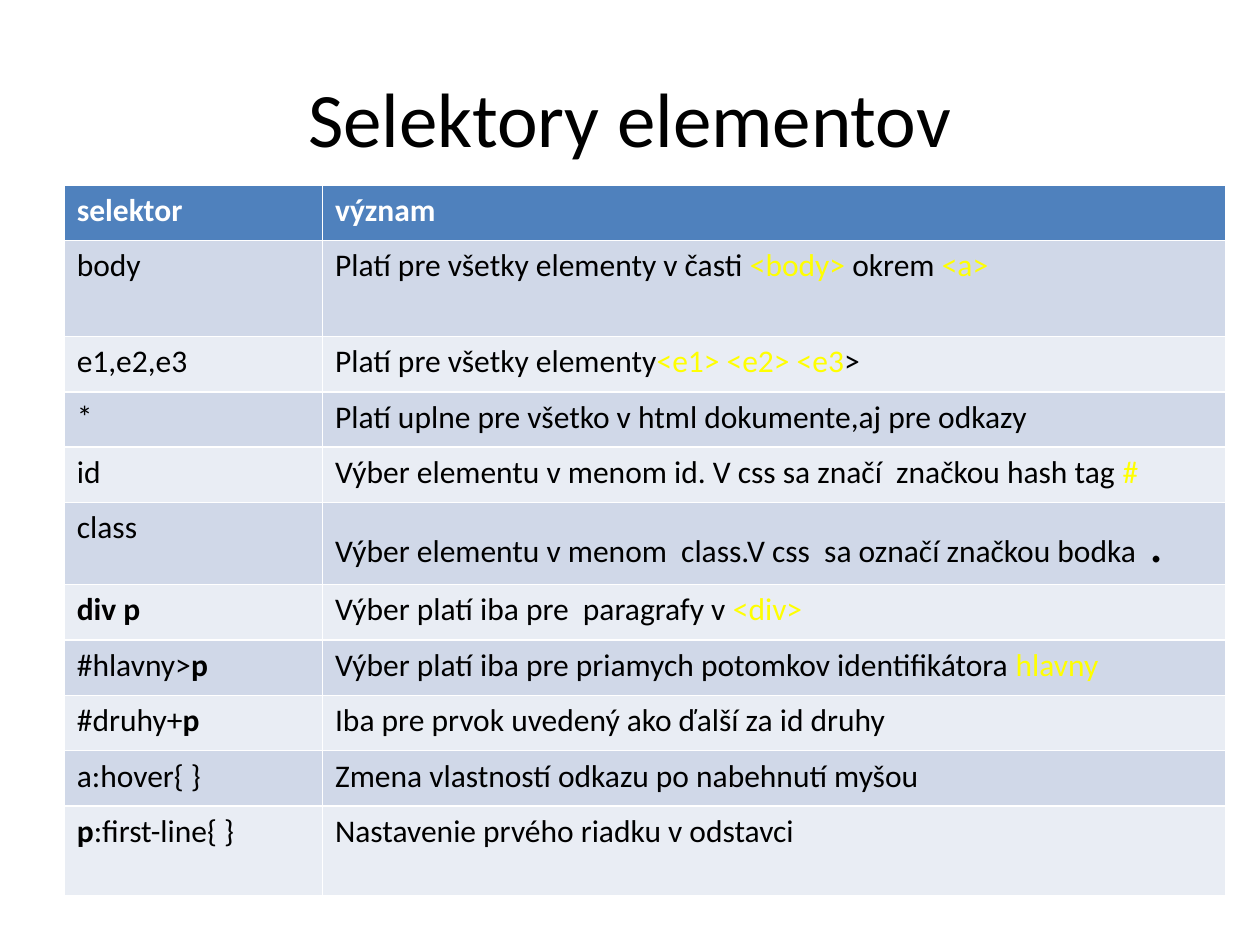
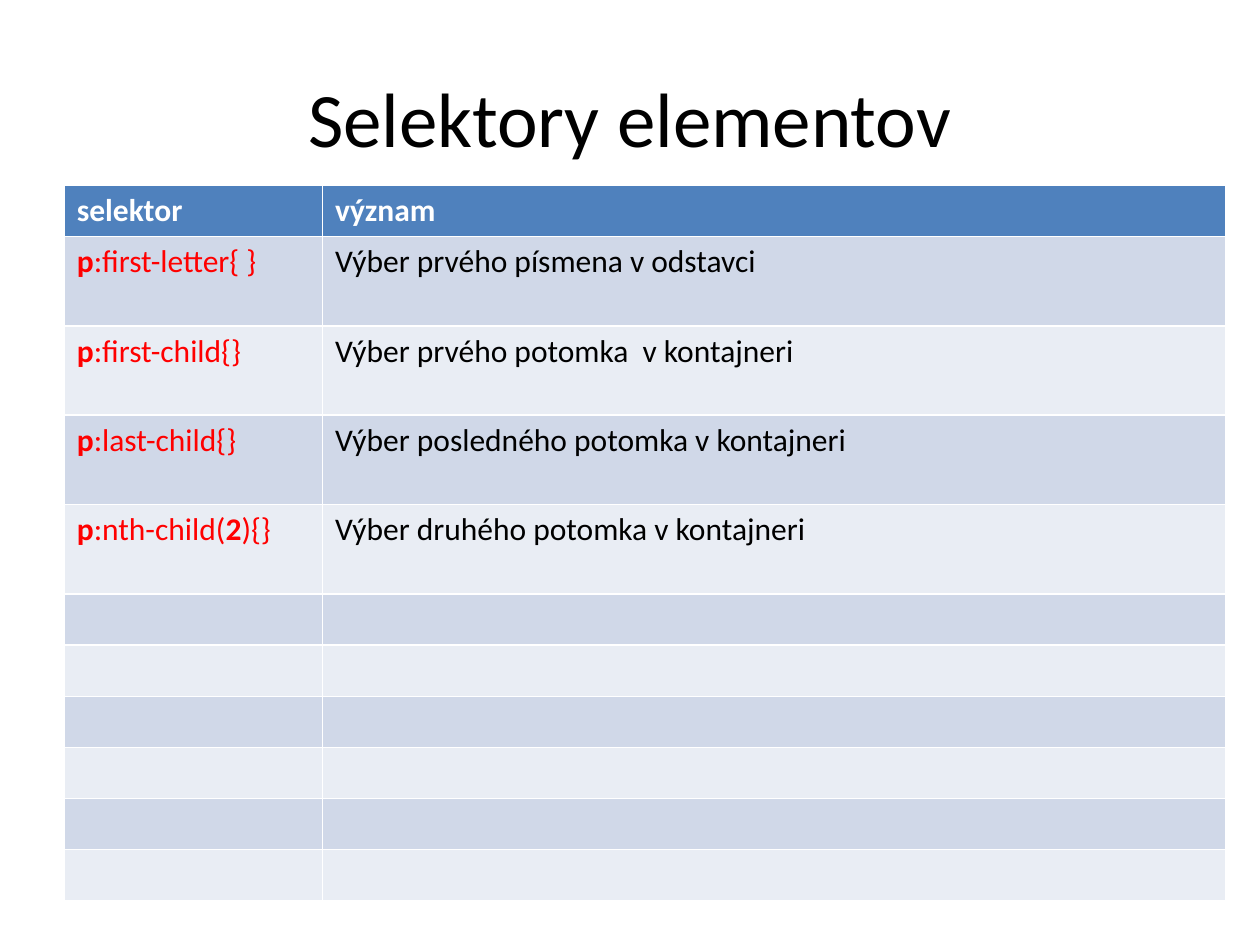
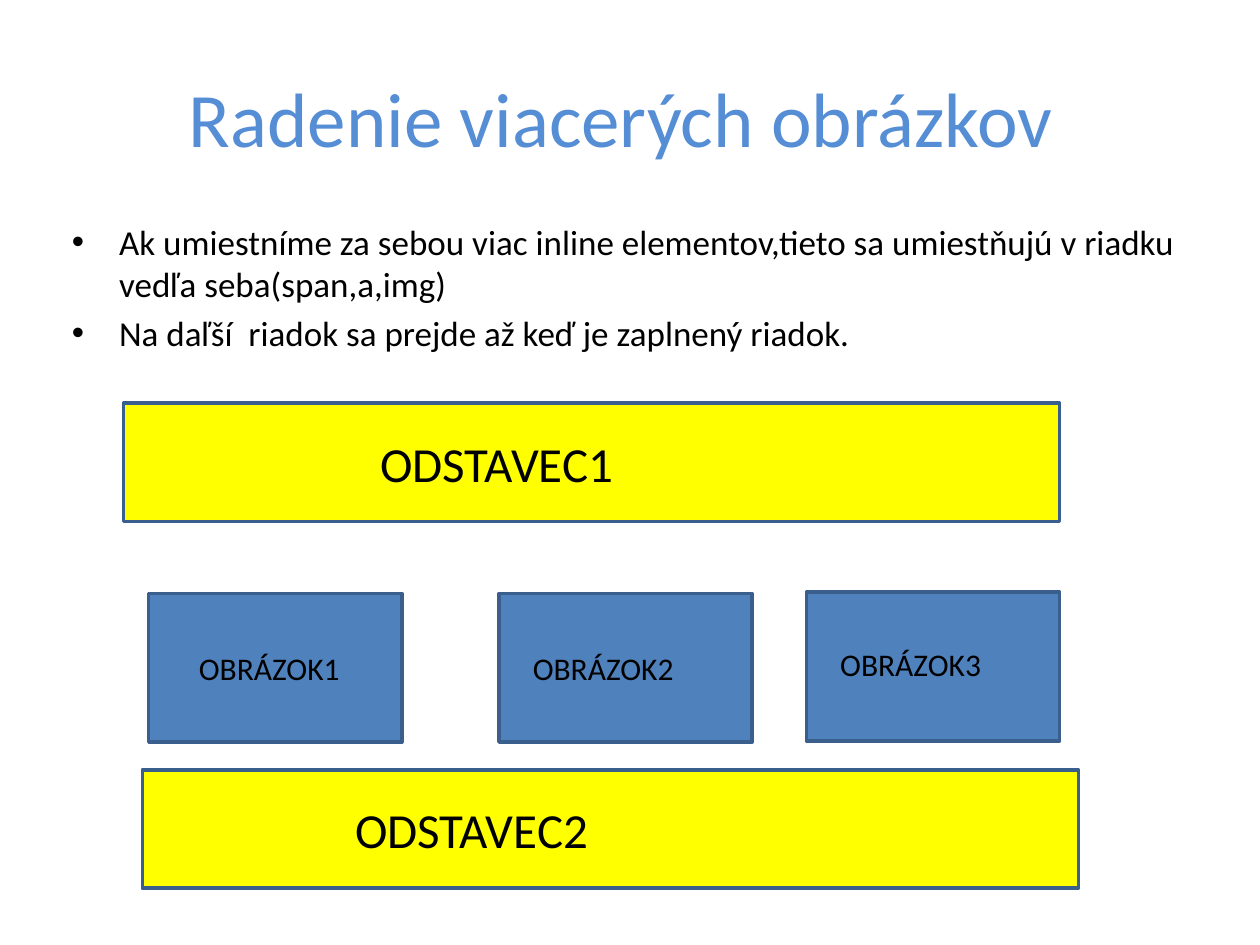
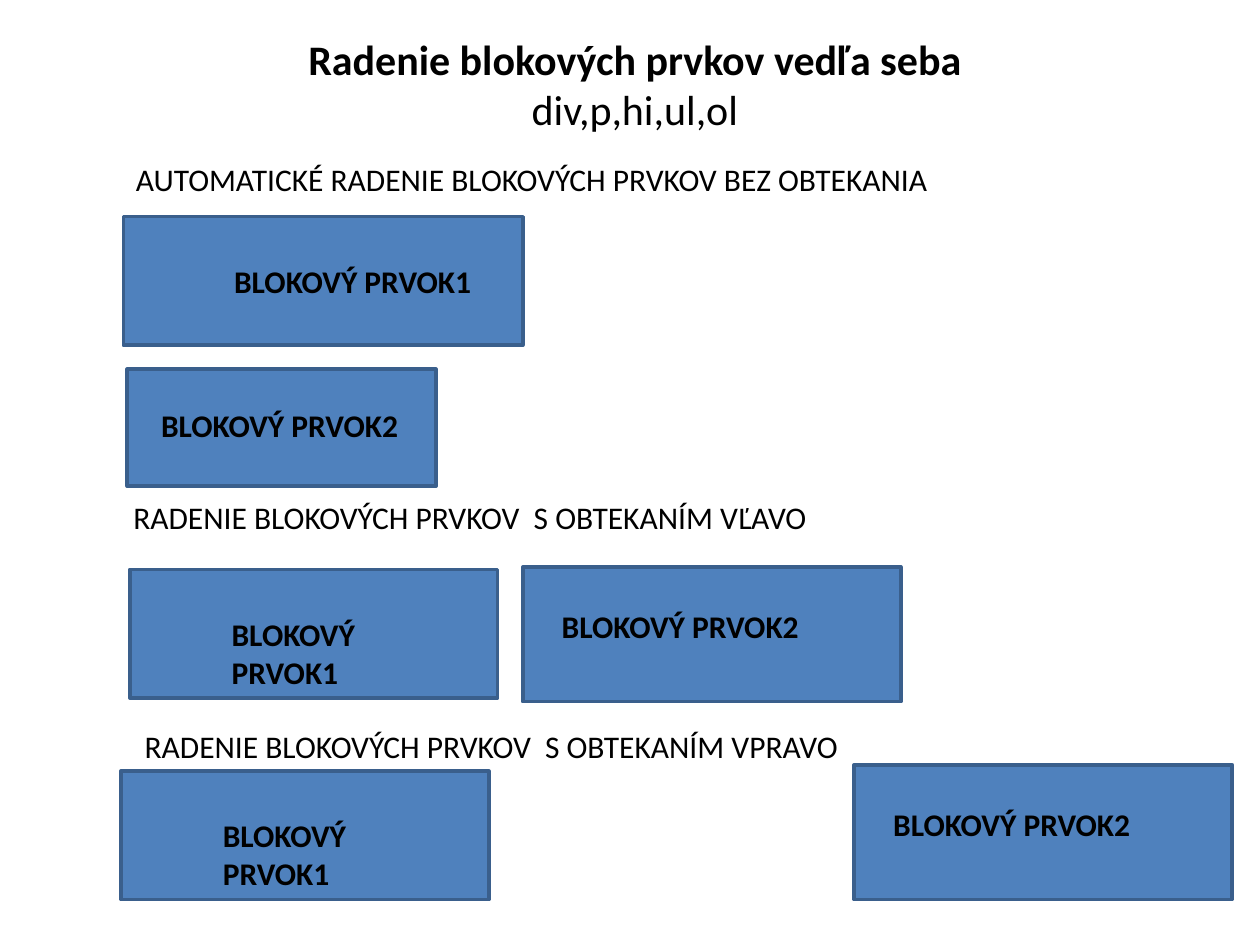
from copy import deepcopy

from pptx import Presentation
from pptx.dml.color import RGBColor
from pptx.enum import shapes, text
from pptx.util import Inches, Pt

FONT = "Calibri"
BLACK, WHITE, YELLOW, RED = "000000", "FFFFFF", "FFFF00", "FF0000"
BLUE, OUTLINE, TITLE_BLUE = "4F81BD", "3A5F8C", "558ED5"
BANDS = ("D0D8E8", "E9EDF4")
TITLE_AND_CONTENT, TITLE_ONLY = 1, 5
HEADER = ("selektor", "význam")


def rgb(value):
    return RGBColor.from_string(value)


def style(run, size=18, color=BLACK, bold=False):
    run.font.name = FONT
    run.font.size = Pt(size)
    run.font.bold = bold
    run.font.color.rgb = rgb(color)


def span(words, **look):
    return words, look


def yellow(words):
    return span(words, color=YELLOW)


def bold(words):
    return span(words, bold=True)


def write(para, content, **look):
    """Fill a paragraph from a string or from a list of strings and spans."""
    for part in [content] if isinstance(content, str) else content:
        words, own_look = (part, {}) if isinstance(part, str) else part
        run = para.add_run()
        run.text = words
        style(run, **{**look, **own_look})


def place(shape, left, top, width, height):
    shape.left, shape.top = Inches(left), Inches(top)
    shape.width, shape.height = Inches(width), Inches(height)


def add_slide(deck, title, layout=TITLE_ONLY, left=0.5, top=0.3, **look):
    """Add a slide with its title, whose lines are separated by breaks."""
    slide = deck.slides.add_slide(deck.slide_layouts[layout])
    place(slide.shapes.title, left, top, 9, 1.25)
    para = slide.shapes.title.text_frame.paragraphs[0]
    para.text = title
    para.alignment = text.PP_ALIGN.CENTER
    for run in para.runs:
        style(run, **{"size": 44, **look})
    for line_break in para._p.br_lst:
        line_break.append(deepcopy(para.runs[0]._r.rPr))
    return slide


def add_selectors(slide, rows, heights):
    """Add a two-column table; rows beyond the given ones stay empty."""
    frame = slide.shapes.add_table(len(heights), 2, Inches(0.51), Inches(1.47),
                                   Inches(9.21), Inches(sum(heights)))
    table = frame.table
    for column, width in zip(table.columns, (2.05, 7.17)):
        column.width = Inches(width)
    for index, height in enumerate(heights):
        table.rows[index].height = Inches(height)
        header = index == 0
        for cell in table.rows[index].cells:
            cell.fill.solid()
            cell.fill.fore_color.rgb = rgb(BLUE if header else BANDS[(index - 1) % 2])
    for index, row in enumerate([HEADER, *rows]):
        look = {"color": WHITE, "bold": True} if index == 0 else {}
        for cell, content in zip(table.rows[index].cells, row):
            write(cell.text_frame.paragraphs[0], content, **look)


def add_rectangle(parent, at, fill=BLUE):
    left, top, width, height = map(Inches, at)
    box = parent.shapes.add_shape(shapes.MSO_SHAPE.RECTANGLE, left, top, width, height)
    box.shadow.inherit = False
    box.fill.solid()
    box.fill.fore_color.rgb = rgb(fill)
    box.line.color.rgb = rgb(OUTLINE)
    box.line.width = Pt(2)


def add_label(parent, words, at, **look):
    box = parent.shapes.add_textbox(*map(Inches, at))
    box.text_frame.word_wrap = True
    write(box.text_frame.paragraphs[0], words, **look)


def add_block(slide, words, at, label_at):
    """Group a blue rectangle with its bold label."""
    group = slide.shapes.add_group_shape()
    add_rectangle(group, at)
    add_label(group, words, label_at, bold=True)


def add_bullets(slide, lines):
    body = slide.placeholders[1]
    place(body, 0.47, 1.7, 9, 1.69)
    frame = body.text_frame
    frame.text = "\n".join(lines)
    for para in frame.paragraphs:
        for run in para.runs:
            style(run, size=20)


def basic_selectors(deck):
    slide = add_slide(deck, "Selektory elementov")
    rows = [
        ("body", ["Platí pre všetky elementy v časti ", yellow("<body> "), "okrem", yellow(" <a>")]),
        ("e1,e2,e3", ["Platí pre všetky elementy", yellow("<e1> <e2> <e3"), ">"]),
        ("*", "Platí uplne pre všetko v html dokumente,aj pre odkazy"),
        ("id", ["Výber elementu v menom id. V css sa značí  značkou hash tag ", yellow("#")]),
        ("class", ["Výber elementu v menom  class.V css  sa označí značkou bodka",
                   span(" .", size=32)]),
        ([bold("div p")], ["Výber platí iba pre  paragrafy v ", yellow("<div>")]),
        (["#hlavny>", bold("p")],
         ["Výber platí iba pre priamych potomkov identifikátora ", yellow("hlavny")]),
        (["#druhy+", bold("p")], "Iba pre prvok uvedený ako ďalší za id druhy"),
        ("a:hover{ }", "Zmena vlastností odkazu po nabehnutí myšou"),
        ([bold("p"), ":first-line{ }"], "Nastavenie prvého riadku v odstavci"),
    ]
    add_selectors(slide, rows, [0.44, 0.76] + [0.44] * 3 + [0.65] + [0.44] * 4 + [0.71])


def child_selectors(deck):
    slide = add_slide(deck, "Selektory elementov")
    red_p = span("p", color=RED, bold=True)

    def red(words):
        return span(words, color=RED)

    rows = [
        ([red_p, red(":first-letter{ }")], "Výber prvého písmena v odstavci"),
        ([red_p, red(":first-child{}")], "Výber prvého potomka  v kontajneri"),
        ([red_p, red(":last-child{}")], "Výber posledného potomka v kontajneri"),
        ([red_p, red(":nth-child("), span("2", color=RED, bold=True), red("){}")],
         "Výber druhého potomka v kontajneri"),
    ]
    add_selectors(slide, rows, [0.4] + [0.71] * 4 + [0.4] * 6)


def image_order(deck):
    slide = add_slide(deck, "Radenie viacerých obrázkov ", TITLE_AND_CONTENT, color=TITLE_BLUE)
    add_bullets(slide, [
        "Ak umiestníme za sebou viac inline elementov,tieto sa umiestňujú v riadku vedľa seba(span,a,img)",
        "Na daľší  riadok sa prejde až keď je zaplnený riadok.",
    ])
    images = [(1.18, 4.71, 1.48, 5.1), (3.96, 4.71, 4.13, 5.1), (6.4, 4.7, 6.57, 5.07)]
    for number, (left, top, label_left, label_top) in enumerate(images, 1):
        add_rectangle(slide, (left, top, 2.01, 1.18))
        add_label(slide, f"OBRÁZOK{number}", (label_left, label_top, 1.42, 0.4))
    paragraphs = [(0.98, 3.2, 2.92), (1.13, 6.11, 2.72)]
    for number, (left, top, label_left) in enumerate(paragraphs, 1):
        add_rectangle(slide, (left, top, 7.43, 0.94), YELLOW)
        add_label(slide, f"ODSTAVEC{number}", (label_left, top + 0.19, 4.88, 0.57), size=28)


def block_order(deck):
    slide = add_slide(deck, "Radenie blokových prvkov vedľa seba\vdiv,p,hi,ul,ol",
                      left=0.54, top=0.04, size=24)
    slide.shapes.title.text_frame.paragraphs[0].runs[0].font.bold = True
    first, second = "BLOKOVÝ PRVOK1", "BLOKOVÝ PRVOK2"
    add_block(slide, second, (1.01, 2.93, 2.45, 0.93), (1.18, 3.17, 2.44, 0.35))
    add_block(slide, first, (0.98, 1.72, 3.17, 1.02), (1.76, 2.03, 2.14, 0.4))
    add_label(slide, "AUTOMATICKÉ RADENIE BLOKOVÝCH PRVKOV BEZ OBTEKANIA", (0.98, 1.22, 7.01, 0.4))
    floats = [
        ("VĽAVO", (0.96, 3.9, 8.16, 0.4), (1.03, 4.52), (4.15, 4.5)),
        ("VPRAVO", (1.05, 5.72, 7.66, 0.4), (0.96, 6.12), (6.78, 6.07)),
    ]
    for side, heading_at, (left, top), (right_left, right_top) in floats:
        add_label(slide, f"RADENIE BLOKOVÝCH PRVKOV  S OBTEKANÍM {side}", heading_at)
        add_block(slide, first, (left, top, 2.92, 1.02), (left + 0.71, top + 0.31, 1.97, 0.4))
        add_block(slide, second, (right_left, right_top, 3, 1.07),
                  (right_left + 0.21, right_top + 0.27, 2.99, 0.4))


def main():
    deck = Presentation()
    deck.slide_width, deck.slide_height = Inches(10), Inches(7.5)
    basic_selectors(deck)
    child_selectors(deck)
    image_order(deck)
    block_order(deck)
    deck.save("out.pptx")


if __name__ == "__main__":
    main()
